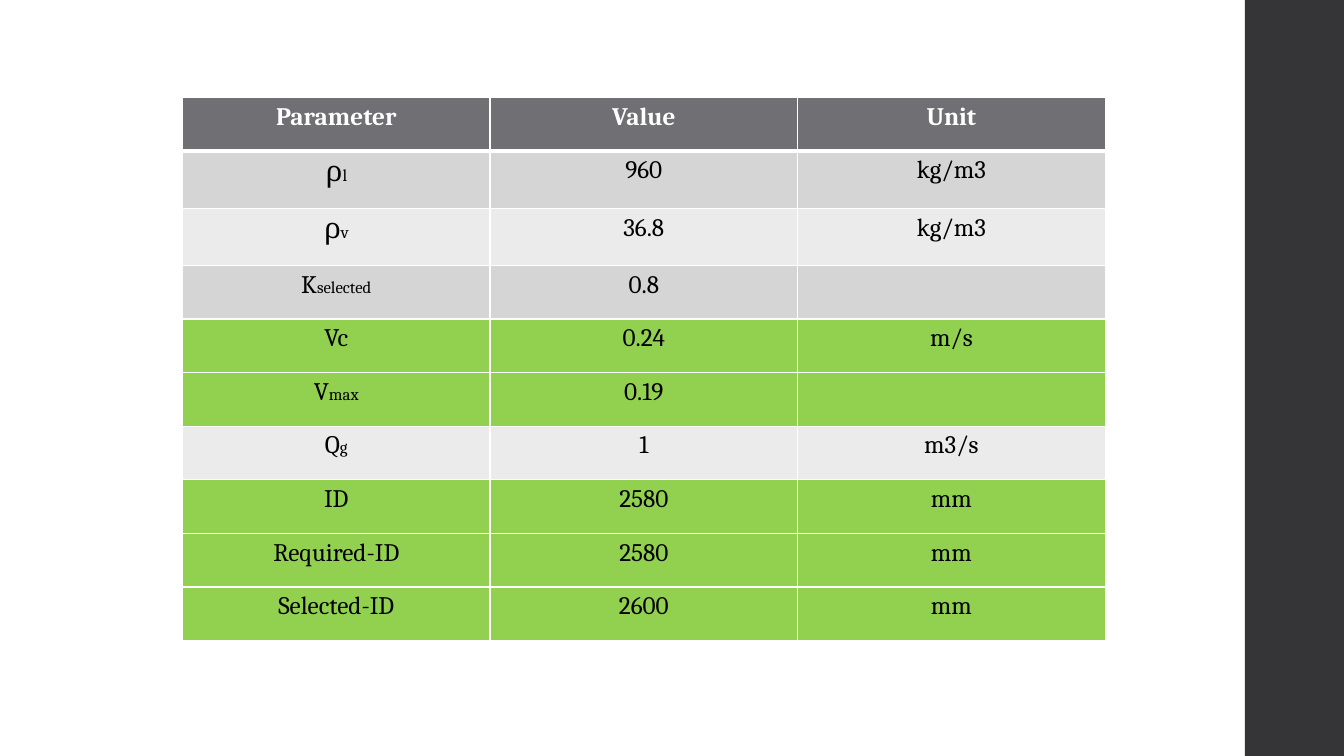
import pptx
import pptx.util
import pptx.dml.color
import pptx.enum.shapes
import pptx.enum.text
import pptx.oxml
import pptx.oxml.ns

Cm = pptx.util.Cm
Pt = pptx.util.Pt

# Content: (symbol, subscript), value, unit, row fill
HEAD, DARK, PALE, GREEN = "6F6F74", "D5D5D6", "EBEBEB", "92D050"
WHITE, BLACK, SIDE = "FFFFFF", "000000", "353537"
ROWS = [
    (("Parameter", ""), "Value", "Unit", HEAD),
    (("ρ", "l"), "960", "kg/m3", DARK),
    (("ρ", "v"), "36.8", "kg/m3", PALE),
    (("K", "selected"), "0.8", "", DARK),
    (("Vc", ""), "0.24", "m/s", GREEN),
    (("V", "max"), "0.19", "", GREEN),
    (("Q", "g"), "1", "m3/s", PALE),
    (("ID", ""), "2580", "mm", GREEN),
    (("Required-ID", ""), "2580", "mm", GREEN),
    (("Selected-ID", ""), "2600", "mm", GREEN),
]

# Sizes in cm
WIDTH, HEIGHT = 33.87, 19.05
BAR = 31.37
LEFT, TOP = 4.6, 2.46
COL, ROW, TALL = 7.75, 1.35, 1.44


def paint(target, color):
    target.fill.solid()
    target.fill.fore_color.rgb = pptx.dml.color.RGBColor.from_string(color)


def write(para, text, size=18, color=BLACK, bold=False):
    run = para.add_run()
    run.text = text
    font = run.font
    font.name, font.size, font.bold = "Cambria", Pt(size), bold
    font.color.rgb = pptx.dml.color.RGBColor.from_string(color)


def edge(cell, side, width):
    line = pptx.oxml.parse_xml(
        f'<a:ln{side} {pptx.oxml.ns.nsdecls("a")} w="{Pt(width)}">'
        f'<a:solidFill><a:srgbClr val="{WHITE}"/></a:solidFill></a:ln{side}>')
    cell._tc.get_or_add_tcPr().append(line)


deck = pptx.Presentation()
deck.slide_width, deck.slide_height = Cm(WIDTH), Cm(HEIGHT)
slide = deck.slides.add_slide(deck.slide_layouts[6])

# Side bar
bar = slide.shapes.add_shape(pptx.enum.shapes.MSO_SHAPE.RECTANGLE,
                             Cm(BAR), 0, Cm(WIDTH - BAR), Cm(HEIGHT))
bar.shadow.inherit = False
paint(bar, SIDE)
bar.line.fill.background()

# Table grid
highs = [TALL if row[0][0] == "ρ" else ROW for row in ROWS]
table = slide.shapes.add_table(len(ROWS), 3, Cm(LEFT), Cm(TOP),
                               Cm(3 * COL), Cm(sum(highs))).table
for col in table.columns:
    col.width = Cm(COL)

# Cells
for r, (name, value, unit, fill) in enumerate(ROWS):
    table.rows[r].height = Cm(highs[r])
    head = r == 0
    for c, (text, sub) in enumerate([name, (value, ""), (unit, "")]):
        cell = table.cell(r, c)
        for side in "LRTB":
            thick = (side == "B" and head) or (side == "T" and r == 1)
            edge(cell, side, 3 if thick else 1)
        paint(cell, fill)
        para = cell.text_frame.paragraphs[0]
        para.alignment = pptx.enum.text.PP_ALIGN.CENTER
        if text:
            write(para, text, size=20 if text == "ρ" else 18,
                  color=WHITE if head else BLACK, bold=head)
        if sub:
            write(para, sub, size=12)

deck.save("out.pptx")
